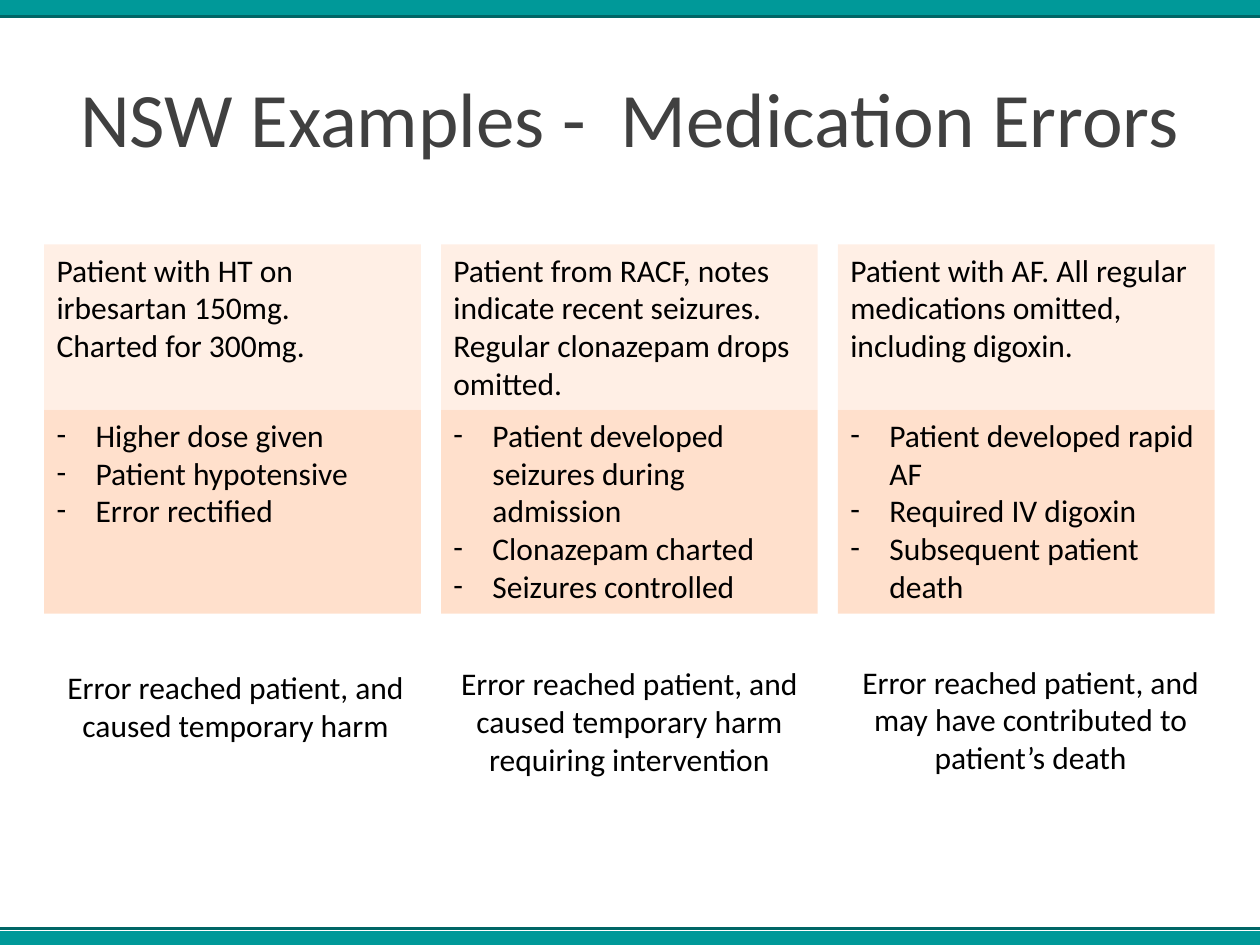
"""Build the slide of three medication error cases: what happened, outcome and harm."""
from lxml import etree
from pptx import Presentation
from pptx import util as u
from pptx.dml.color import RGBColor
from pptx.enum import shapes, text
from pptx.oxml.ns import qn

TITLE = "NSW Examples -  Medication Errors"
CASES = [
    {
        "event": ["Patient with HT on irbesartan 150mg.", "Charted for 300mg."],
        "outcome": ["Higher dose given", "Patient hypotensive", "Error rectified"],
        "harm": "Error reached patient, and caused temporary harm",
        "harm_box": (0.39, 5.25, 2.96, 0.71),
    },
    {
        "event": ["Patient from RACF, notes indicate recent seizures. "
                  "Regular clonazepam drops omitted."],
        "outcome": ["Patient developed seizures during admission",
                    "Clonazepam charted", "Seizures controlled"],
        "harm": "Error reached patient, and caused temporary harm requiring intervention",
        "harm_box": (3.5, 5.22, 2.99, 1.01),
    },
    {
        "event": ["Patient with AF. All regular medications omitted, including digoxin."],
        "outcome": ["Patient developed rapid AF", "Required IV digoxin",
                    "Subsequent patient death"],
        "harm": "Error reached patient, and may have contributed to patient’s death",
        "harm_box": (6.71, 5.21, 2.94, 1.01),
    },
]
THEME = {
    "font": "Calibri", "title_size": 44, "body_size": 18,
    "title": "404040", "body": "000000",
    "band": "009999", "rule": "006666", "panel": "FF6600",
    "event_alpha": 10, "outcome_alpha": 20,
}
SLIDE_W, SLIDE_H = 10, 7.5
BANDS = [(0, 0.13, 0.13), (7.39, 0.11, 7.37)]
COLUMN_LEFT, COLUMN_STEP, COLUMN_W = 0.35, 3.15, 2.99
EVENT_TOP, EVENT_H, OUTCOME_H = 1.94, 1.31, 1.62
DASH_INDENT = 0.31


def inches(box):
    return [u.Inches(length) for length in box]


def style(font, size, color):
    font.name, font.size = THEME["font"], u.Pt(size)
    font.color.rgb = RGBColor.from_string(color)


def add_dash(paragraph):
    properties = paragraph._p.get_or_add_pPr()
    properties.set("marL", str(u.Inches(DASH_INDENT)))
    properties.set("indent", str(-u.Inches(DASH_INDENT)))
    etree.SubElement(properties, qn("a:buFont"), typeface=THEME["font"])
    etree.SubElement(properties, qn("a:buChar"), char="-")


def write(frame, lines, align=text.PP_ALIGN.LEFT, dashed=False):
    frame.word_wrap = True
    frame.vertical_anchor = text.MSO_ANCHOR.TOP
    frame.text = "\n".join(lines)
    for paragraph in frame.paragraphs:
        paragraph.alignment = align
        if dashed:
            add_dash(paragraph)
        for run in paragraph.runs:
            style(run.font, THEME["body_size"], THEME["body"])


def add_block(slide, box, color, alpha=100):
    block = slide.shapes.add_shape(shapes.MSO_SHAPE.RECTANGLE, *inches(box))
    block.shadow.inherit = False
    block.line.fill.background()
    block.fill.solid()
    block.fill.fore_color.rgb = RGBColor.from_string(color)
    if alpha < 100:
        fill_color = block._element.spPr.find(qn("a:solidFill"))[0]
        etree.SubElement(fill_color, qn("a:alpha"), val=str(alpha * 1000))
    return block


def add_rule(slide, y):
    rule = slide.shapes.add_connector(
        shapes.MSO_CONNECTOR.STRAIGHT, *inches((0, y, SLIDE_W, y)))
    rule.line.color.rgb = RGBColor.from_string(THEME["rule"])
    rule.line.width = u.Pt(2)
    etree.SubElement(rule._element.spPr, qn("a:effectLst"))


def add_title(slide):
    title = slide.shapes.title
    title.left, title.top, title.width, title.height = inches((0.5, 0.3, 9, 1.25))
    title.text_frame.text = TITLE
    title.text_frame.vertical_anchor = text.MSO_ANCHOR.MIDDLE
    style(title.text_frame.paragraphs[0].runs[0].font,
          THEME["title_size"], THEME["title"])


def add_case(slide, column, case):
    left = COLUMN_LEFT + column * COLUMN_STEP
    event = add_block(slide, (left, EVENT_TOP, COLUMN_W, EVENT_H),
                      THEME["panel"], THEME["event_alpha"])
    write(event.text_frame, case["event"])
    outcome = add_block(slide, (left, EVENT_TOP + EVENT_H, COLUMN_W, OUTCOME_H),
                        THEME["panel"], THEME["outcome_alpha"])
    write(outcome.text_frame, case["outcome"], dashed=True)
    harm = slide.shapes.add_textbox(*inches(case["harm_box"]))
    write(harm.text_frame, [case["harm"]], align=text.PP_ALIGN.CENTER)


def main():
    deck = Presentation()
    deck.slide_width, deck.slide_height = inches((SLIDE_W, SLIDE_H))
    slide = deck.slides.add_slide(deck.slide_layouts.get_by_name("Title Only"))
    for top, height, rule_y in BANDS:
        add_block(slide, (0, top, SLIDE_W, height), THEME["band"])
        add_rule(slide, rule_y)
    add_title(slide)
    for column, case in enumerate(CASES):
        add_case(slide, column, case)
    deck.save("out.pptx")


if __name__ == "__main__":
    main()
